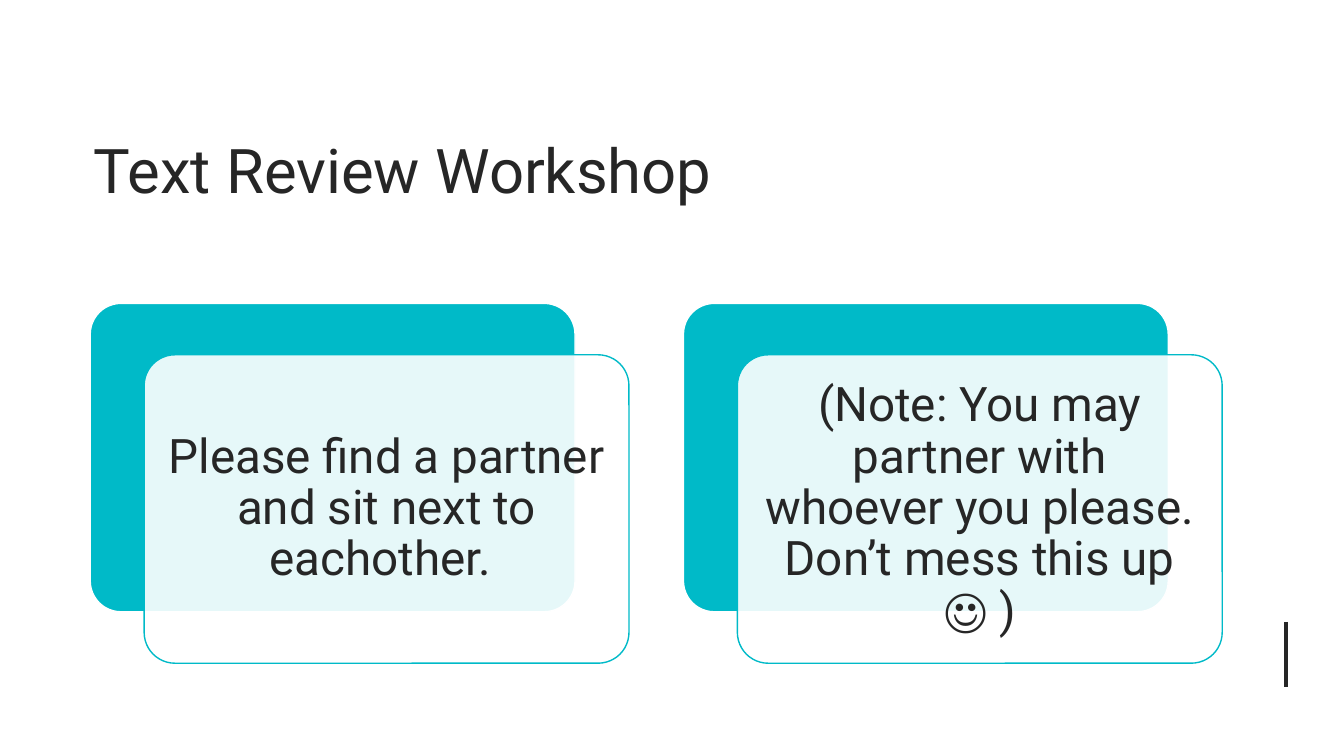
from lxml.etree import SubElement
from pptx import Presentation
from pptx.dml.color import RGBColor
from pptx.enum.shapes import MSO_CONNECTOR, MSO_SHAPE
from pptx.enum.text import MSO_ANCHOR, MSO_AUTO_SIZE, PP_ALIGN
from pptx.oxml.ns import qn
from pptx.util import Inches, Pt

INSTRUCTIONS = [
    "Please find a partner and sit next to eachother. ",
    "(Note: You may partner with whoever you please. Don’t mess this up ☺ )",
]


def color(hex_code):
    return RGBColor.from_string(hex_code)


def cells(*counts):
    """Turn counts of grid columns or rows, each 0.1 inch, into lengths."""
    return [Inches(count / 10) for count in counts]


class WorkshopSlide:
    FONT = "Roboto"
    INK, TEAL, WHITE = "262626", "00BAC8", "FFFFFF"
    CARD_SIZE = (48.1, 30.6)

    def __init__(self, presentation):
        self.slide = presentation.slides.add_slide(presentation.slide_layouts[5])
        background = self.slide.background.fill
        background.solid()
        background.fore_color.rgb = color(self.WHITE)

    def set_text(self, frame, text, size, align):
        frame.text = text
        frame.word_wrap = True
        frame.auto_size = MSO_AUTO_SIZE.NONE
        frame.vertical_anchor = MSO_ANCHOR.MIDDLE
        paragraph = frame.paragraphs[0]
        paragraph.alignment = align
        paragraph.line_spacing = 0.9
        paragraph.font.name = self.FONT
        paragraph.font.size = Pt(size)
        paragraph.font.color.rgb = color(self.INK)

    def title(self, text, left, top, width, height):
        heading = self.slide.shapes.title
        heading.left, heading.top, heading.width, heading.height = cells(left, top, width, height)
        self.set_text(heading.text_frame, text, 44, PP_ALIGN.LEFT)

    def panel(self, left, top, fill, line, opacity=100):
        panel = self.slide.shapes.add_shape(
            MSO_SHAPE.ROUNDED_RECTANGLE, *cells(left, top, *self.CARD_SIZE))
        panel.adjustments[0] = 0.1
        panel.shadow.inherit = False
        panel.fill.solid()
        panel.fill.fore_color.rgb = color(fill)
        panel.line.color.rgb = color(line)
        panel.line.width = Pt(1)
        if opacity < 100:
            fill_color = panel._element.spPr.find(qn("a:solidFill"))[0]
            SubElement(fill_color, qn("a:alpha"), val=str(opacity * 1000))
        return panel

    def card(self, text, left, top):
        """Add a teal panel with a translucent text panel shifted over it."""
        self.panel(left, top, self.TEAL, self.WHITE)
        front = self.panel(left + 5.35, top + 5.1, self.WHITE, self.TEAL, opacity=90)
        frame = front.text_frame
        frame.margin_left = frame.margin_right = Inches(0.14)
        frame.margin_top = frame.margin_bottom = Inches(0.14)
        self.set_text(frame, text, 34, PP_ALIGN.CENTER)

    def vertical_rule(self, left, top, bottom):
        rule = self.slide.shapes.add_connector(
            MSO_CONNECTOR.STRAIGHT, *cells(left, top, left, bottom))
        rule.line.color.rgb = color(self.INK)
        rule.line.width = Pt(3)
        SubElement(rule._element.spPr, qn("a:effectLst"))


def main():
    presentation = Presentation()
    presentation.slide_width, presentation.slide_height = cells(133.33, 75)
    workshop = WorkshopSlide(presentation)
    workshop.title("Text Review Workshop", 8.3, 9.4, 104.9, 15.7)
    workshop.vertical_rule(127.6, 61.7, 68.2)
    for index, instruction in enumerate(INSTRUCTIONS):
        workshop.card(instruction, 8.95 + index * 58.85, 30.1)
    presentation.save("out.pptx")


if __name__ == "__main__":
    main()
